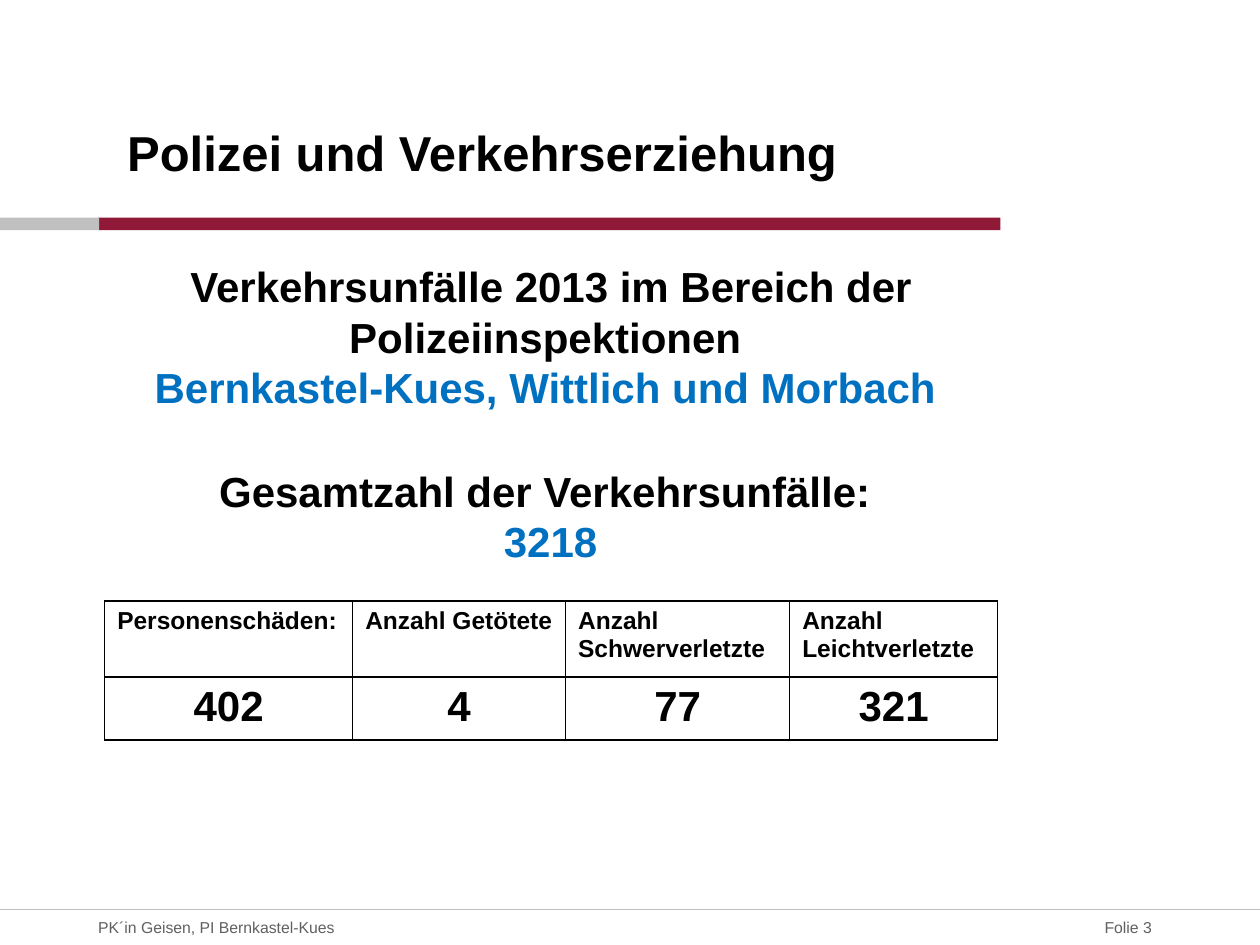
from lxml import etree
from pptx import Presentation
from pptx.dml.color import RGBColor
from pptx.enum.shapes import MSO_CONNECTOR, MSO_SHAPE
from pptx.enum.text import MSO_ANCHOR, MSO_AUTO_SIZE, PP_ALIGN
from pptx.oxml.ns import qn
from pptx.util import Cm, Pt

LEFT, CENTER, RIGHT = PP_ALIGN.LEFT, PP_ALIGN.CENTER, PP_ALIGN.RIGHT
TOP, MIDDLE = MSO_ANCHOR.TOP, MSO_ANCHOR.MIDDLE
BLACK, BLUE, GREY, RED, SILVER = "000000", "0070C0", "606060", "8F1936", "C0C0C0"

# Places are left, top, width, height in cm.
TITLE = ("Polizei und Verkehrserziehung", (2.31, 2.34, 16.21, 1.45))
STATEMENTS = [
    ((2.51, 5.13, 17.2, 3.33), [
        ("Verkehrsunfälle 2013 im Bereich der Polizeiinspektionen ", BLACK),
        ("Bernkastel-Kues, Wittlich und Morbach ", BLUE)]),
    ((1.7, 9.25, 18.8, 2.29), [
        ("Gesamtzahl der Verkehrsunfälle: ", BLACK),
        ("3218", BLUE)]),
]
FOOTERS = [
    ("PK´in Geisen, PI Bernkastel-Kues", (1.98, 18.34, 14, 0.71), LEFT),
    ("Folie 3", (20.17, 18.34, 3.05, 0.71), RIGHT),
]
BARS = [((1.98, 4.39, 18.19, 0.25), RED), ((0, 4.39, 2, 0.25), SILVER)]
FOOTER_RULE_TOP = 18.34

CASUALTIES = [
    (["Personenschäden:"], "402"),
    (["Anzahl Getötete"], "4"),
    (["Anzahl", "Schwerverletzte"], "77"),
    (["Anzahl", "Leichtverletzte"], "321"),
]
TABLE_LEFT, TABLE_TOP = 2.11, 12.12
COLUMN_WIDTHS = [5, 4.29, 4.52, 4.19]
ROW_HEIGHTS = [1.53, 1.27]


def color(value):
    return RGBColor.from_string(value)


def lengths(place):
    return [Cm(value) for value in place]


def write(frame, lines, size, bold=True, align=LEFT):
    """Fill a text frame with one paragraph per (text, colour) pair."""
    for index, (text, shade) in enumerate(lines):
        para = frame.paragraphs[0] if index == 0 else frame.add_paragraph()
        para.alignment = align
        span = para.add_run()
        span.text = text
        for name, value in {"name": "Arial", "size": Pt(size), "bold": bold}.items():
            setattr(span.font, name, value)
        span.font.color.rgb = color(shade)


def add_text(page, place, lines, size, bold=True, align=LEFT, anchor=TOP, inset=None):
    frame = page.shapes.add_textbox(*lengths(place)).text_frame
    frame.word_wrap = True
    frame.vertical_anchor = anchor
    if inset is not None:
        for side in ("left", "top", "right", "bottom"):
            setattr(frame, f"margin_{side}", Cm(inset))
    write(frame, lines, size, bold, align)


def add_title(page):
    text, place = TITLE
    title = page.shapes.title
    title.left, title.top, title.width, title.height = lengths(place)
    frame = title.text_frame
    for name, value in {"word_wrap": True, "vertical_anchor": TOP,
                        "auto_size": MSO_AUTO_SIZE.NONE}.items():
        setattr(frame, name, value)
    write(frame, [(text, BLACK)], 28)


def add_decoration(page, page_width):
    for place, shade in BARS:
        bar = page.shapes.add_shape(MSO_SHAPE.RECTANGLE, *lengths(place))
        bar.shadow.inherit = False
        bar.fill.solid()
        bar.fill.fore_color.rgb = color(shade)
        bar.line.fill.background()
    top = Cm(FOOTER_RULE_TOP)
    rule = page.shapes.add_connector(MSO_CONNECTOR.STRAIGHT, 0, top, page_width, top)
    rule.line.color.rgb = color(SILVER)
    rule.line.width = Pt(0.75)
    etree.SubElement(rule._element.spPr, qn("a:effectLst"))


def set_borders(cell):
    properties = cell._tc.get_or_add_tcPr()
    for index, side in enumerate(("lnL", "lnR", "lnT", "lnB")):
        border = etree.Element(qn(f"a:{side}"), w=str(Pt(1)))
        fill = etree.SubElement(border, qn("a:solidFill"))
        etree.SubElement(fill, qn("a:srgbClr"), val=BLACK)
        properties.insert(index, border)


def add_casualty_table(page):
    place = (TABLE_LEFT, TABLE_TOP, sum(COLUMN_WIDTHS), sum(ROW_HEIGHTS))
    table = page.shapes.add_table(
        len(ROW_HEIGHTS), len(COLUMN_WIDTHS), *lengths(place)).table
    table.first_row = table.horz_banding = False
    for row, height in zip(table.rows, ROW_HEIGHTS):
        row.height = Cm(height)
    for index, (width, (heading, count)) in enumerate(zip(COLUMN_WIDTHS, CASUALTIES)):
        table.columns[index].width = Cm(width)
        head, body = table.cell(0, index), table.cell(1, index)
        write(head.text_frame, [(line, BLACK) for line in heading], 14)
        write(body.text_frame, [(count, BLACK)], 24, align=CENTER)
        for cell in (head, body):
            cell.fill.background()
            set_borders(cell)


def main():
    deck = Presentation()
    deck.slide_width, deck.slide_height = Cm(25.4), Cm(19.05)
    page = deck.slides.add_slide(deck.slide_layouts.get_by_name("Title Only"))
    add_decoration(page, deck.slide_width)
    add_title(page)
    for place, lines in STATEMENTS:
        add_text(page, place, lines, 24, align=CENTER)
    add_casualty_table(page)
    for text, place, align in FOOTERS:
        add_text(page, place, [(text, GREY)], 9, False, align, MIDDLE, inset=0)
    deck.save("out.pptx")


if __name__ == "__main__":
    main()
